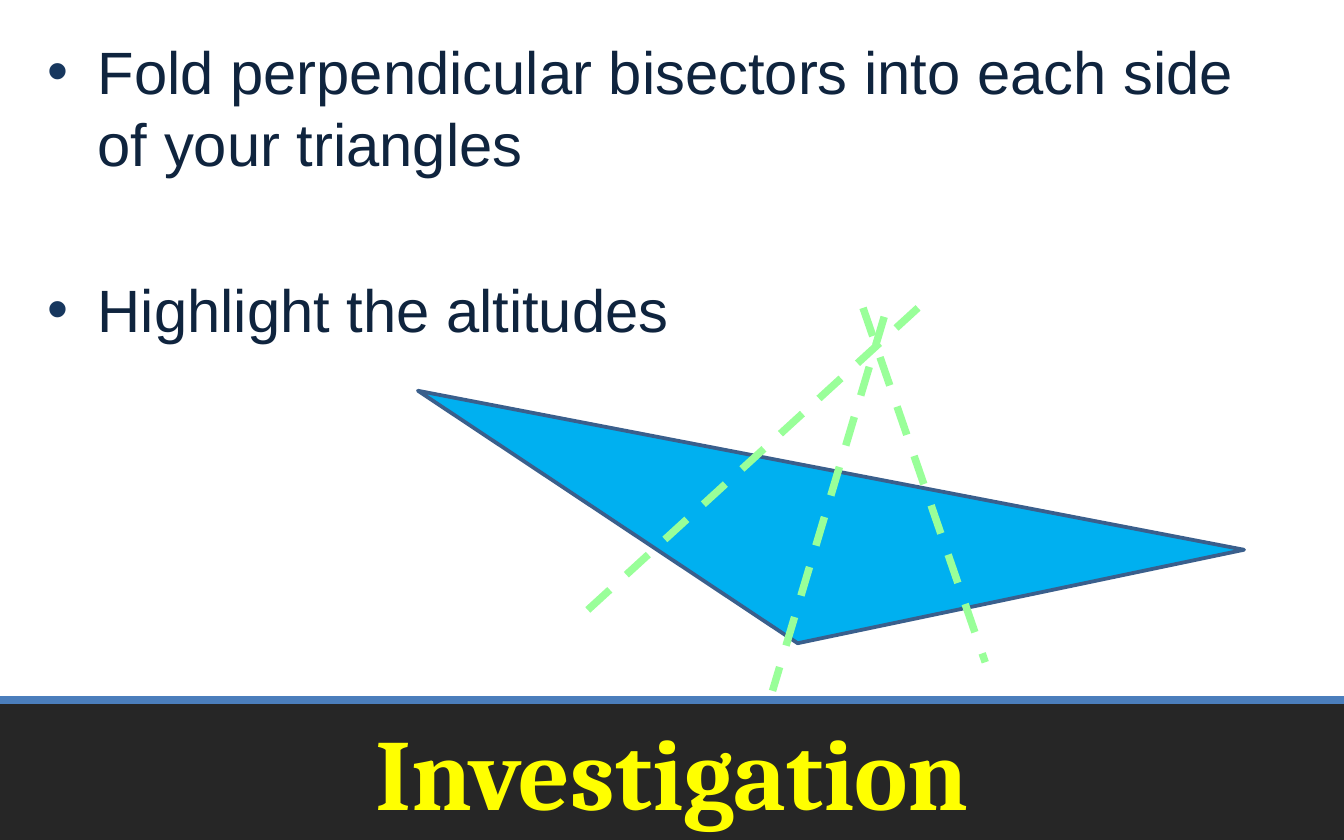
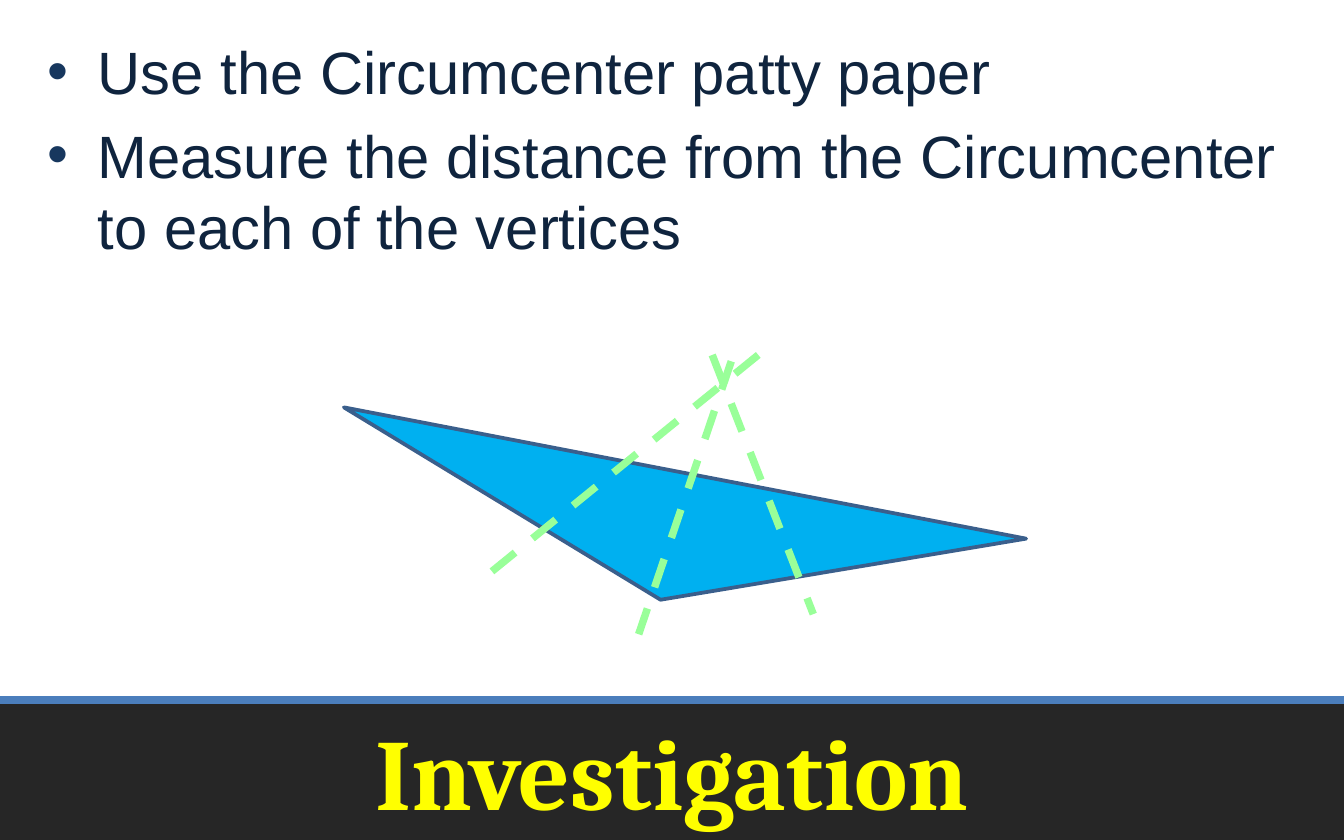
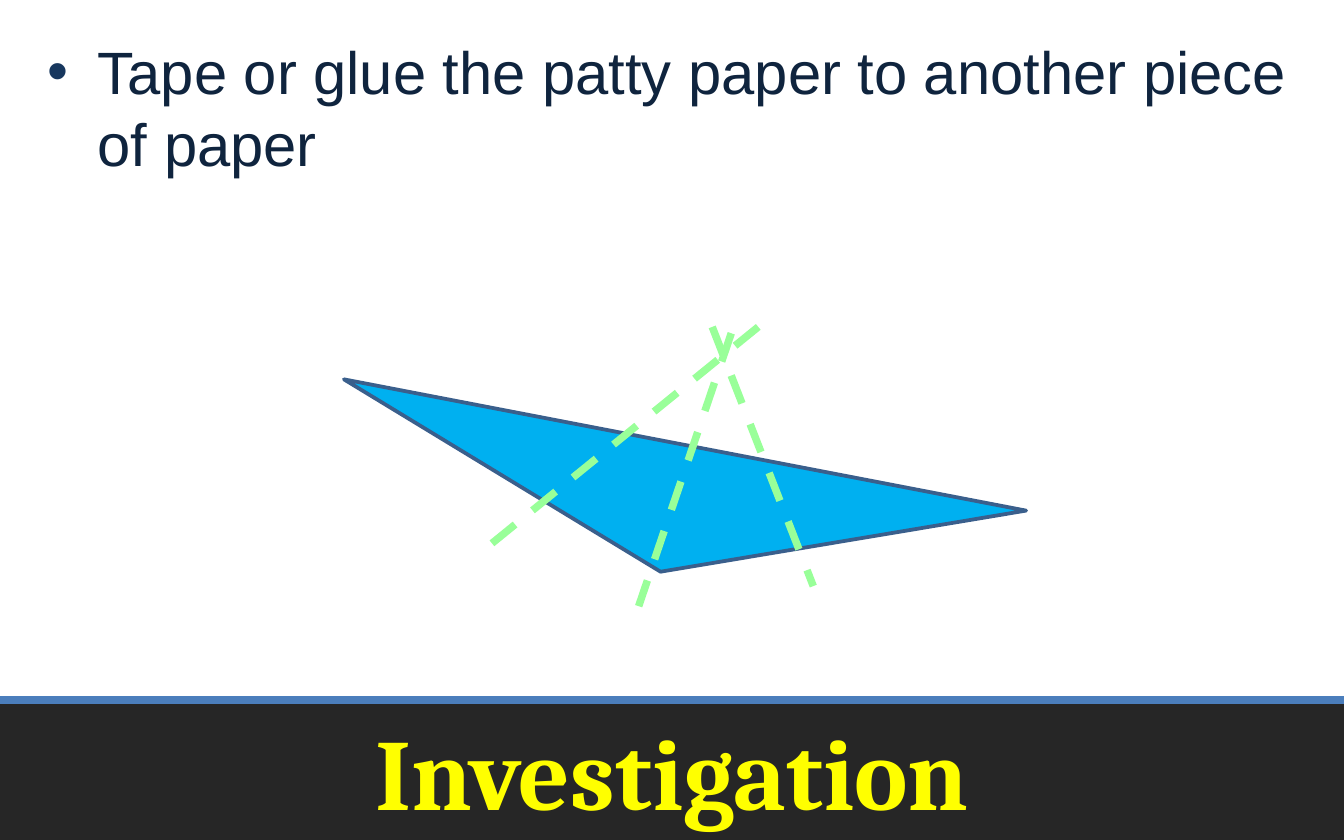
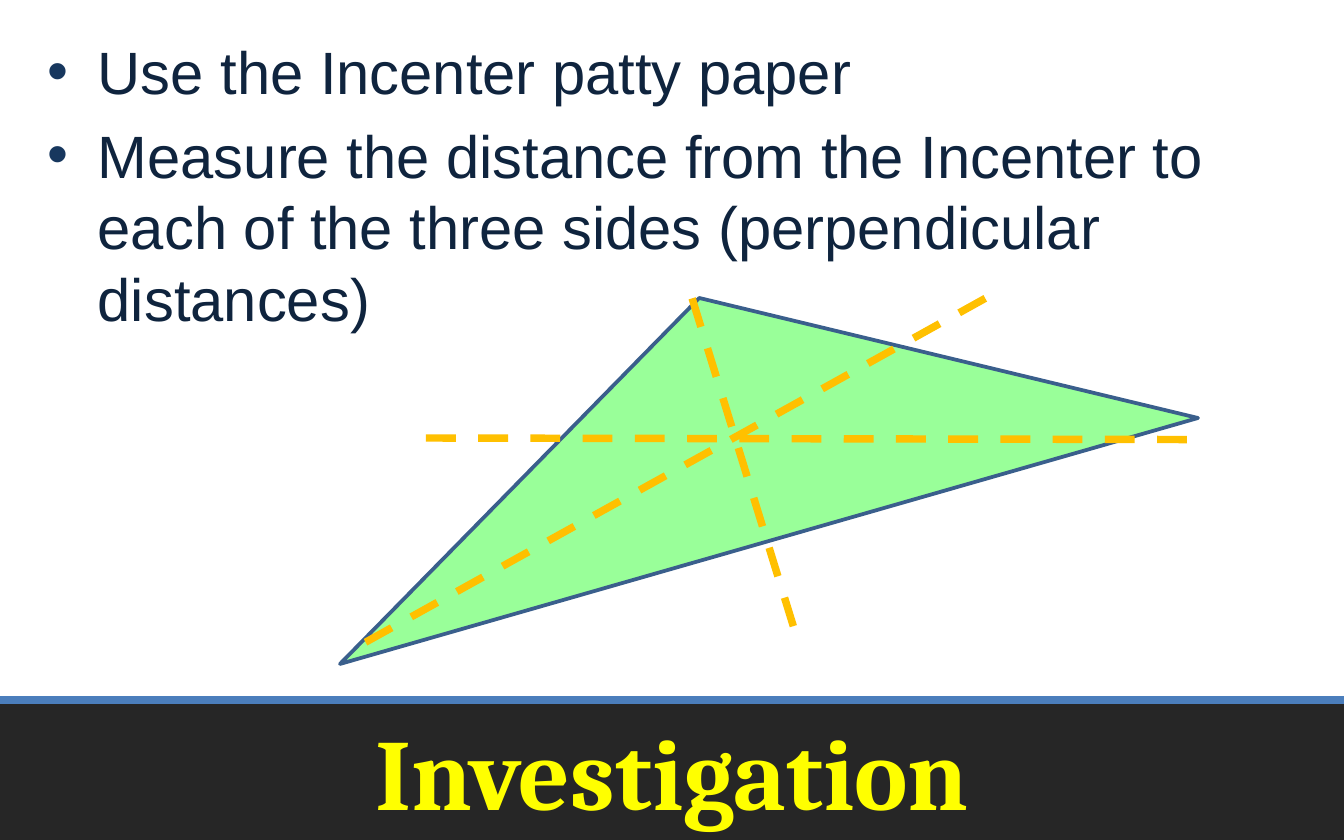
from lxml.etree import SubElement
from pptx import Presentation
from pptx.dml.color import RGBColor
from pptx.enum.dml import MSO_LINE
from pptx.enum.shapes import MSO_CONNECTOR, MSO_SHAPE
from pptx.enum.text import MSO_ANCHOR, MSO_AUTO_SIZE, PP_ALIGN
from pptx.oxml.ns import qn
from pptx.util import Cm, Pt

COLORS = {
    "band": "262626",
    "rule": "4B7EBC",
    "title": "FFFF00",
    "body": "0F243E",
    "bullet": "17375E",
    "outline": "3A5F8C",
    "blue": "00B0F0",
    "green": "99FF99",
    "orange": "FFC000",
}
SLIDE_WIDTH, SLIDE_HEIGHT = 25.4, 15.88
BAND = (0, 13.23, SLIDE_WIDTH, 2.65)
TITLE_AREA = (0.64, 13.23, 24.13, 2.65)
BODY_AREA = (0.64, 0.53, 24.13, 12.52)
TITLE = "Investigation"

LARGE_BISECTORS = {
    "triangle": (7.44, 8.86, 15.9, 3.33),
    "rotation": 190.9,
    "fill": "blue",
    "fold": "green",
    "folds": [
        (16.71, 5.99, 14.6, 13.06),
        (16.31, 5.82, 18.62, 12.52),
        (17.35, 5.82, 11, 11.63),
    ],
}
SMALL_BISECTORS = {
    "triangle": (6.15, 8.92, 13.13, 2.44),
    "rotation": 190.9,
    "fill": "blue",
    "fold": "green",
    "folds": [
        (13.82, 6.83, 12.07, 11.99),
        (13.46, 6.71, 15.37, 11.61),
        (14.33, 6.71, 9.09, 10.97),
    ],
    "grouped": True,
}
ANGLE_BISECTORS = {
    "triangle": (5.44, 5.54, 16.87, 4.78),
    "rotation": 344,
    "fill": "green",
    "fold": "orange",
    "folds": [
        (13.08, 5.64, 15.04, 11.99),
        (18.62, 5.64, 6.55, 12.34),
        (8.05, 8.28, 22.76, 8.31),
    ],
    "behind_text": True,
}
SLIDES = [
    {
        "bullets": [
            ("Fold perpendicular bisectors into each side of your triangles", None),
            ("Highlight the altitudes", 51),
        ],
        "figure": LARGE_BISECTORS,
    },
    {
        "bullets": [
            ("Use the Circumcenter patty paper", None),
            ("Measure the distance from the Circumcenter to each of the vertices", None),
        ],
        "figure": SMALL_BISECTORS,
    },
    {
        "bullets": [("Tape or glue the patty paper to another piece of paper", None)],
        "figure": SMALL_BISECTORS,
        "shift": -0.53,
    },
    {
        "bullets": [
            ("Use the Incenter patty paper", None),
            (
                "Measure the distance from the Incenter to each of the three sides "
                "(perpendicular distances)",
                None,
            ),
        ],
        "figure": ANGLE_BISECTORS,
    },
]


def color(name):
    return RGBColor.from_string(COLORS[name])


def write(para, text, *, size, font, ink, bold=False, align=None, before=None, bullet=None):
    para.alignment = align
    if before is not None:
        para.space_before = Pt(before)
    if bullet:
        bullet_color = SubElement(para._p.get_or_add_pPr(), qn("a:buClr"))
        SubElement(bullet_color, qn("a:srgbClr"), val=COLORS[bullet])
    span = para.add_run()
    span.text = text
    span.font.size = Pt(size)
    span.font.name = font
    span.font.bold = bold
    span.font.color.rgb = color(ink)


def place(box, area):
    box.left, box.top, box.width, box.height = map(Cm, area)


def add_filled(shapes, kind, area, fill):
    shape = shapes.add_shape(kind, *map(Cm, area))
    shape.shadow.inherit = False
    shape.fill.solid()
    shape.fill.fore_color.rgb = color(fill)
    return shape


def add_line(shapes, ends, ink, dash=None):
    line = shapes.add_connector(MSO_CONNECTOR.STRAIGHT, *map(Cm, ends))
    line.line.color.rgb = color(ink)
    line.line.width = Pt(4)
    if dash:
        line.line.dash_style = dash
    SubElement(line.element.spPr, qn("a:effectLst"))
    return line


def style_layout(layout, page):
    title, body, *footers = list(layout.placeholders)
    place(title, TITLE_AREA)
    place(body, BODY_AREA)
    for footer in footers:
        footer.element.getparent().remove(footer.element)
    band = add_filled(page.shapes, MSO_SHAPE.RECTANGLE, BAND, "band")
    band.line.fill.background()
    left, top, width, _ = BAND
    rule = add_line(page.shapes, (left, top, left + width, top), "rule")
    for position, shape in enumerate((band, rule), start=2):
        layout.shapes.element.insert(position, shape.element)


def fill_text(page, bullets):
    title, body = page.placeholders
    title.text_frame.auto_size = MSO_AUTO_SIZE.NONE
    title.text_frame.vertical_anchor = MSO_ANCHOR.MIDDLE
    write(title.text_frame.paragraphs[0], TITLE, size=54, font="Cambria",
          ink="title", bold=True, align=PP_ALIGN.CENTER)
    frame = body.text_frame
    frame.auto_size = MSO_AUTO_SIZE.NONE
    for index, (text, before) in enumerate(bullets):
        para = frame.add_paragraph() if index else frame.paragraphs[0]
        write(para, text, size=32, font="Arial", ink="body", before=before, bullet="bullet")


def draw_figure(page, figure, shift):
    shapes = page.shapes
    if figure.get("grouped"):
        shapes = shapes.add_group_shape().shapes
    left, top, width, height = figure["triangle"]
    triangle = add_filled(shapes, MSO_SHAPE.ISOSCELES_TRIANGLE,
                          (left, top + shift, width, height), figure["fill"])
    triangle.rotation = figure["rotation"]
    triangle.line.color.rgb = color("outline")
    triangle.line.width = Pt(2)
    if figure.get("behind_text"):
        page.shapes.element.insert(2, triangle.element)
    for x1, y1, x2, y2 in figure["folds"]:
        add_line(shapes, (x1, y1 + shift, x2, y2 + shift), figure["fold"], MSO_LINE.DASH)


def main():
    deck = Presentation()
    deck.slide_width, deck.slide_height = Cm(SLIDE_WIDTH), Cm(SLIDE_HEIGHT)
    layout = deck.slide_layouts[1]
    pages = [deck.slides.add_slide(layout) for _ in SLIDES]
    style_layout(layout, pages[0])
    for page, content in zip(pages, SLIDES):
        fill_text(page, content["bullets"])
        draw_figure(page, content["figure"], content.get("shift", 0))
    deck.save("out.pptx")


if __name__ == "__main__":
    main()
